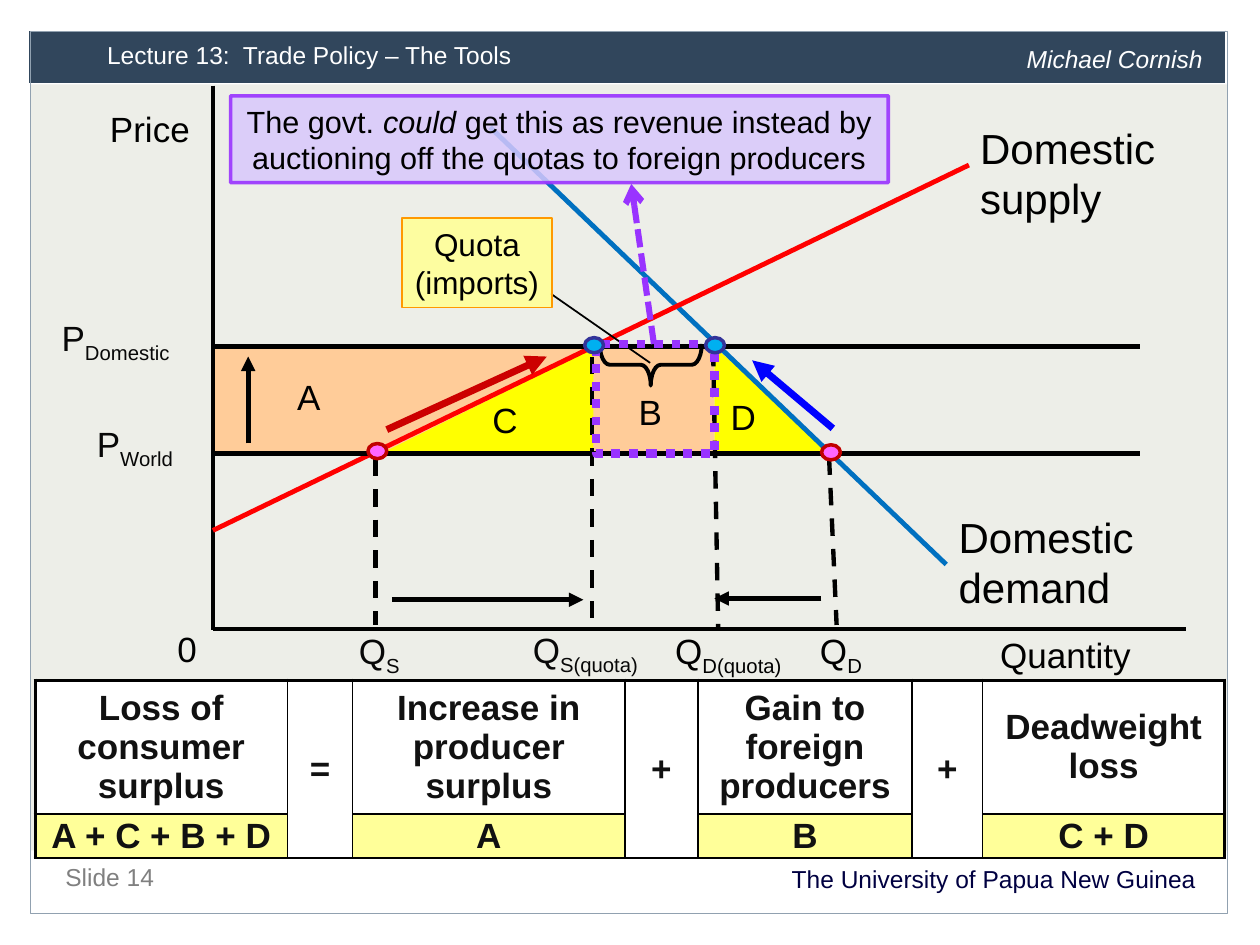
from collections import namedtuple

from lxml.etree import SubElement
from pptx import Presentation
from pptx.dml.color import RGBColor
from pptx.enum.dml import MSO_LINE
from pptx.enum.shapes import MSO_CONNECTOR, MSO_SHAPE
from pptx.enum.text import MSO_ANCHOR, PP_ALIGN
from pptx.oxml.ns import qn
from pptx.util import Inches, Pt

Box = namedtuple("Box", "left top width height")
BLACK, WHITE, PURPLE = "000000", "FFFFFF", "9933FF"
PEACH, YELLOW, PALE_YELLOW = "FFCC99", "FFFF00", "FFFF99"


def color(hex_string):
    return RGBColor.from_string(hex_string)


def inside(box, left, top, width, height):
    return Box(box.left + left, box.top + top, width, height)


def set_values(target, values):
    for name, value in values.items():
        setattr(target, name, value)


def set_opacity(fill, percent):
    tint = fill._xPr.find(".//" + qn("a:srgbClr"))
    SubElement(tint, qn("a:alpha"), val=str(percent * 1000))


def write(frame, runs, size, ink=BLACK, align=PP_ALIGN.LEFT, spacing=None,
          anchor=MSO_ANCHOR.TOP):
    """Fill a text frame with one paragraph; runs are (text, font values) pairs."""
    set_values(frame, {"word_wrap": True, "vertical_anchor": anchor})
    paragraph = frame.paragraphs[0]
    set_values(paragraph, {"alignment": align, "line_spacing": spacing})
    for text, values in runs:
        run = paragraph.add_run()
        run.text = text
        set_values(run.font, {"name": "Arial", "size": Pt(size), "bold": False})
        run.font.color.rgb = color(ink)
        for name, value in values.items():
            if name == "subscript":
                run.font._element.set("baseline", "-25000")
            else:
                setattr(run.font, name, value)


def add_text(slide, box, runs, size, **layout):
    text_box = slide.shapes.add_textbox(*map(Inches, box))
    write(text_box.text_frame, runs, size, **layout)


def add_shape(slide, kind, box, fill=None, line=None, width=0.75):
    shape = slide.shapes.add_shape(kind, *map(Inches, box))
    shape.shadow.inherit = False
    for part, tint in ((shape.fill, fill), (shape.line.fill, line)):
        if tint:
            part.solid()
            part.fore_color.rgb = color(tint)
        else:
            part.background()
    if line:
        shape.line.width = Pt(width)
    return shape


def add_line(slide, box, start, end, tint=BLACK, width=2.5, dash=None, head=None):
    points = [box.left + start[0], box.top + start[1], box.left + end[0], box.top + end[1]]
    connector = slide.shapes.add_connector(MSO_CONNECTOR.STRAIGHT, *map(Inches, points))
    connector.line.fill.solid()
    connector.line.fill.fore_color.rgb = color(tint)
    connector.line.width = Pt(width)
    if dash:
        connector.line.dash_style = dash
    properties = connector.element.spPr
    if head:
        SubElement(properties.find(qn("a:ln")), qn("a:tailEnd"), type=head)
    SubElement(properties, qn("a:effectLst"))


def add_frame(slide, box):
    """Page border, title bar and footer."""
    add_shape(slide, MSO_SHAPE.RECTANGLE, inside(box, 0.01, 0.43, 9.5, 6.08), "EDEEE8")
    add_shape(slide, MSO_SHAPE.RECTANGLE, inside(box, 0, 0, 9.5, 0.42), "31465C", WHITE, 0.5)
    add_shape(slide, MSO_SHAPE.RECTANGLE, inside(box, 0.01, 0.01, 9.5, 7), line="91A1B0")
    title = slide.shapes.title
    names = ("left", "top", "width", "height")
    set_values(title, dict(zip(names, map(Inches, inside(box, 0.52, 0.01, 6.13, 0.37)))))
    write(title.text_frame, [("Lecture 13:  Trade Policy – The Tools", {})], 14, WHITE,
          spacing=Pt(18))
    slide.shapes.element.append(title.element)
    add_text(slide, inside(box, 7.82, 0.04, 1.64, 0.37),
             [("Michael Cornish", {"italic": True})], 14, ink=WHITE, spacing=Pt(18))
    add_text(slide, inside(box, 0.19, 6.51, 4.33, 0.34), [("Slide 14", {})], 14,
             ink="808080", spacing=Pt(20))
    add_text(slide, inside(box, 0.19, 6.59, 9.17, 0.32),
             [("The University of Papua New Guinea", {})], 14, ink="000041",
             align=PP_ALIGN.RIGHT, spacing=Pt(15))


def add_welfare_areas(slide, box):
    top, height = 2.08, 0.85
    add_shape(slide, MSO_SHAPE.RIGHT_TRIANGLE, inside(box, 3.2, 1.64, height, 1.72),
              YELLOW).rotation = 270
    add_shape(slide, MSO_SHAPE.RIGHT_TRIANGLE, inside(box, 5.42, top, 0.94, height), YELLOW)
    add_shape(slide, MSO_SHAPE.RECTANGLE, inside(box, 4.46, top, 0.96, height), PEACH)
    surplus = add_shape(slide, MSO_SHAPE.RIGHT_TRIANGLE,
                        inside(box, 2.76, top, 1.71, height), PEACH, PEACH)
    surplus.element.spPr.find(qn("a:xfrm")).set("flipV", "1")
    add_shape(slide, MSO_SHAPE.RECTANGLE, inside(box, 1.44, top, 1.33, height), PEACH, PEACH)


def add_curves(slide, box):
    """Axes, price levels, supply and demand, and drop lines."""
    axis_x, axis_y = 1.44, 4.32
    add_line(slide, box, (axis_x, 0.01), (axis_x, axis_y + 0.01))
    add_line(slide, box, (axis_x, axis_y), (9.16, axis_y))
    add_line(slide, box, (3.64, 0.34), (7.26, 3.81), "0070C0", 2.75)
    for start, end in (((4.45, 2.16), (4.45, 4.32)), ((6.33, 2.96), (6.39, 4.29)),
                       ((5.41, 2.1), (5.45, 4.33)), ((2.73, 2.97), (2.73, 4.29))):
        add_line(slide, box, start, end, dash=MSO_LINE.DASH)
    add_line(slide, box, (axis_x, 3.54), (7.44, 0.64), "FF0000", 2.75)
    for price in (2.08, 2.93):
        add_line(slide, box, (axis_x, price), (8.8, price))
    for start, end, tint, width in (
            ((6.36, 2.73), (5.72, 2.19), "0000FF", 4),
            ((2.82, 2.74), (4.09, 2.16), "CC0000", 4),
            ((1.72, 2.85), (1.72, 2.16), BLACK, 2.75),
            ((2.86, 4.09), (4.38, 4.09), BLACK, 2.75),
            ((6.27, 4.08), (5.42, 4.08), BLACK, 2.75)):
        add_line(slide, box, start, end, tint, width, head="triangle")


def add_labels(slide, box):
    for text, place, size in (
            ("Quantity", (7.59, 4.37, 1.66, 0.36), 20), ("0", (1.06, 4.26, 0.47, 0.43), 20),
            ("A", (2.01, 2.26, 0.76, 0.43), 20), ("C", (3.56, 2.44, 0.76, 0.43), 20),
            ("B", (4.72, 2.38, 0.38, 0.44), 20), ("D", (5.45, 2.42, 0.54, 0.43), 20),
            ("Domestic supply", (7.43, 0.25, 1.89, 0.89), 24),
            ("Domestic demand", (7.26, 3.34, 1.99, 0.89), 24)):
        add_text(slide, inside(box, *place), [(text, {})], size,
                 spacing=0.8 if text == "Quantity" else None)
    add_text(slide, inside(box, 0.38, 0.2, 1.12, 0.36), [("Price", {})], 20,
             align=PP_ALIGN.CENTER, spacing=0.8)
    for letter, subscript, place, ink in (
            ("P", "Domestic", (0.14, 1.83, 1.45, 0.36), "080808"),
            ("P", "World", (0.42, 2.67, 1.05, 0.36), "080808"),
            ("Q", "S(quota)", (3.88, 4.27, 1.22, 0.43), "080808"),
            ("Q", "S", (2.5, 4.28, 0.57, 0.43), "080808"),
            ("Q", "D", (6.16, 4.28, 0.57, 0.43), BLACK),
            ("Q", "D(quota)", (5.01, 4.28, 1.22, 0.43), BLACK)):
        add_text(slide, inside(box, *place), [(letter, {}), (subscript, {"subscript": True})],
                 20, ink=ink, spacing=0.8 if letter == "P" else None)


def add_quota_notes(slide, box):
    """Brace, outlined quota area, its two notes and the equilibrium points."""
    brace = add_shape(slide, MSO_SHAPE.LEFT_BRACE, inside(box, 4.75, 1.82, 0.33, 0.81),
                      line=BLACK, width=2.25)
    brace.rotation = 270
    brace.adjustments[0] = 0.24
    add_line(slide, box, (4.12, 1.66), (4.91, 2.21), width=1)
    quota = add_shape(slide, MSO_SHAPE.RECTANGLE, inside(box, 2.94, 1.06, 1.19, 0.71),
                      PALE_YELLOW, "FF9900")
    set_opacity(quota.fill, 90)
    set_values(quota.text_frame, {"margin_left": Inches(0.08), "margin_right": Inches(0.08)})
    centred = {"align": PP_ALIGN.CENTER, "anchor": MSO_ANCHOR.MIDDLE}
    write(quota.text_frame, [("Quota (imports)", {})], 18, **centred)
    outline = add_shape(slide, MSO_SHAPE.RECTANGLE, inside(box, 4.48, 2.06, 0.94, 0.87),
                        line=PURPLE, width=5)
    outline.line.dash_style = MSO_LINE.ROUND_DOT
    add_line(slide, box, (4.94, 2.06), (4.76, 0.79), PURPLE, 3.5, MSO_LINE.SQUARE_DOT, "arrow")
    revenue = add_shape(slide, MSO_SHAPE.RECTANGLE, inside(box, 1.58, 0.09, 5.22, 0.69),
                        "D8C8FC", PURPLE, 2)
    set_opacity(revenue.fill, 85)
    set_opacity(revenue.line.fill, 90)
    write(revenue.text_frame, [
        ("The govt. ", {}), ("could", {"italic": True}),
        (" get this as revenue instead by auctioning off the quotas to foreign producers", {}),
    ], 17.5, **centred)
    for left, top, fill, line in ((2.67, 2.85, "FF66FF", "C00000"),
                                  (6.27, 2.86, "FF66FF", "C00000"),
                                  (4.39, 2.01, "00B0F0", "333399"),
                                  (5.35, 2.01, "00B0F0", "333399")):
        add_shape(slide, MSO_SHAPE.OVAL, inside(box, left, top, 0.15, 0.12), fill, line, 2)


def add_border(cell, side, width):
    border = SubElement(cell._tc.get_or_add_tcPr(), qn("a:" + side), w=str(Pt(width)))
    SubElement(SubElement(border, qn("a:solidFill")), qn("a:srgbClr"), val=BLACK)


def add_surplus_table(slide, box):
    rows = (("Loss of consumer surplus", "=", "Increase in producer surplus", "+",
             "Gain to foreign producers", "+", "Deadweight loss"),
            ("A + C + B + D", "", "A", "", "B", "", "C + D"))
    table = slide.shapes.add_table(2, 7, *map(Inches, box)).table
    set_values(table, {"first_row": False, "horz_banding": False})
    for column, width in zip(table.columns, (2, 0.52, 2.16, 0.58, 1.7, 0.56, 1.92)):
        column.width = Inches(width)
    for row, height in zip(table.rows, (1.06, 0.35)):
        row.height = Inches(height)
    for column in (1, 3, 5):
        table.cell(0, column).merge(table.cell(1, column))
    for r, texts in enumerate(rows):
        for c, text in enumerate(texts):
            cell = table.cell(r, c)
            set_values(cell, {"margin_left": Inches(0.11), "margin_right": Inches(0.11),
                              "margin_top": 0, "margin_bottom": 0,
                              "vertical_anchor": MSO_ANCHOR.MIDDLE})
            for side, thick in (("lnL", c == 0), ("lnR", c == 6), ("lnT", r == 0),
                                ("lnB", False)):
                add_border(cell, side, 2.25 if thick else 1)
            cell.fill.solid()
            cell.fill.fore_color.rgb = color(PALE_YELLOW if r and text else WHITE)
            if text:
                write(cell.text_frame, [(text, {"bold": True})], 20, "111111",
                      PP_ALIGN.CENTER, anchor=MSO_ANCHOR.MIDDLE)
                cell.vertical_anchor = MSO_ANCHOR.MIDDLE


def main():
    presentation = Presentation()
    set_values(presentation, {"slide_width": Inches(10), "slide_height": Inches(7.5)})
    slide = presentation.slides.add_slide(presentation.slide_layouts[5])
    add_frame(slide, Box(0.23, 0.24, 9.5, 7))
    diagram = Box(0.25, 0.67, 9.5, 4.73)
    for add_part in (add_welfare_areas, add_curves, add_labels, add_quota_notes):
        add_part(slide, diagram)
    add_surplus_table(slide, Box(0.28, 5.4, 9.45, 1.42))
    presentation.save("out.pptx")


if __name__ == "__main__":
    main()
